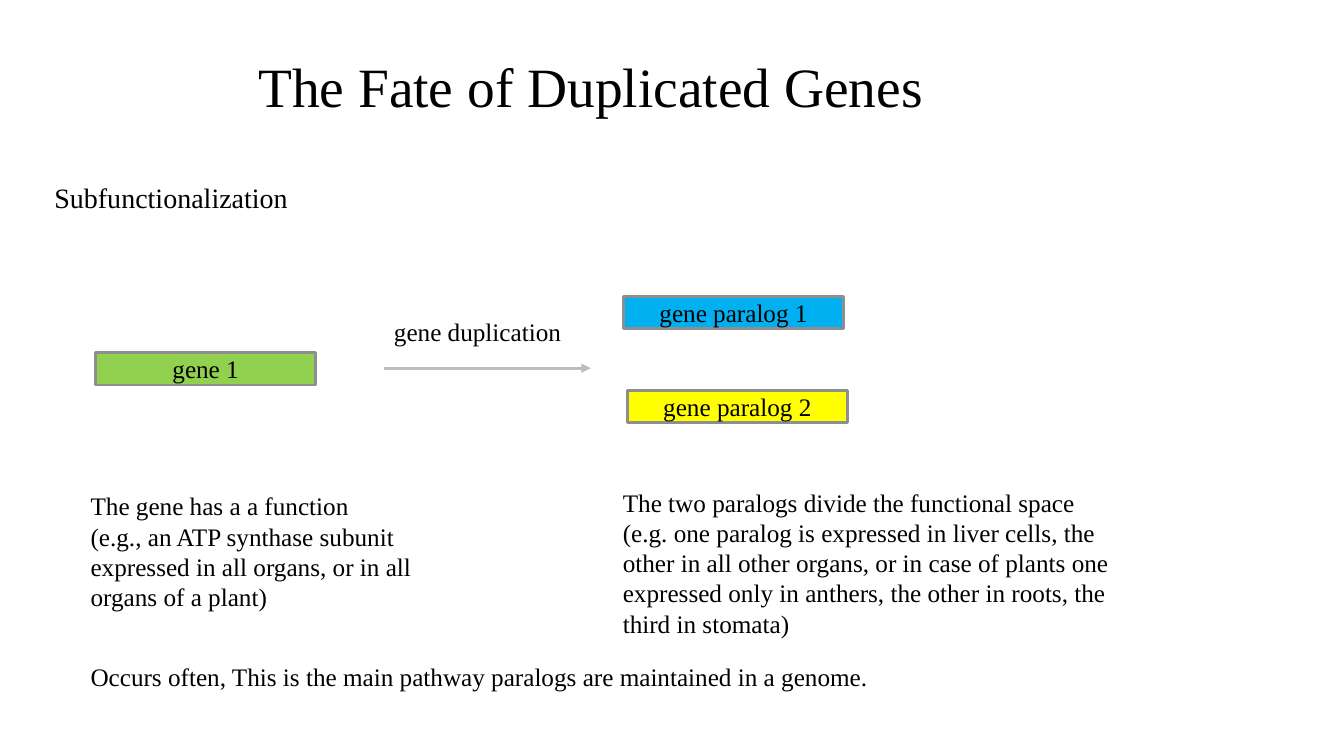
from pptx import Presentation
from pptx.dml.color import RGBColor
from pptx.enum.shapes import MSO_CONNECTOR, MSO_SHAPE
from pptx.enum.text import MSO_ANCHOR, MSO_AUTO_SIZE, PP_ALIGN
from pptx.oxml.ns import qn
from pptx.util import Pt
from lxml.etree import SubElement

FONT = "Times New Roman"
BLACK = RGBColor(0x00, 0x00, 0x00)
GREEN = RGBColor(0x92, 0xD0, 0x50)
BLUE = RGBColor(0x00, 0xB0, 0xF0)
YELLOW = RGBColor(0xFF, 0xFF, 0x00)
BORDER = RGBColor(0x8E, 0x8E, 0x8E)
ARROW = RGBColor(0xBC, 0xBC, 0xBC)


def add_text(p, text, size):
    r = p.add_run()
    r.text = text
    r.font.name = FONT
    r.font.size = Pt(size)
    r.font.color.rgb = BLACK


prs = Presentation()
prs.slide_width, prs.slide_height = Pt(960), Pt(540)
s = prs.slides.add_slide(prs.slide_layouts[5])

title = s.shapes.title
title.left, title.top, title.width, title.height = Pt(8), Pt(8.6), Pt(828), Pt(104.4)
tf = title.text_frame
tf.vertical_anchor = MSO_ANCHOR.MIDDLE
p = tf.paragraphs[0]
p.alignment = PP_ALIGN.CENTER
add_text(p, "The Fate of Duplicated Genes", 39.6)

genes = [
    ("gene 1", 68.4, 252, GREEN),
    ("gene paralog 1", 445.5, 211.6, BLUE),
    ("gene paralog 2", 448.2, 278.8, YELLOW),
]
for name, left, top, color in genes:
    sp = s.shapes.add_shape(MSO_SHAPE.RECTANGLE, Pt(left), Pt(top), Pt(157), Pt(23))
    sp.shadow.inherit = False
    sp.fill.solid()
    sp.fill.fore_color.rgb = color
    sp.line.color.rgb = BORDER
    sp.line.width = Pt(2)
    tf = sp.text_frame
    tf.vertical_anchor = MSO_ANCHOR.MIDDLE
    p = tf.paragraphs[0]
    p.alignment = PP_ALIGN.CENTER
    add_text(p, name, 18)

arrow = s.shapes.add_connector(MSO_CONNECTOR.STRAIGHT, Pt(274.3), Pt(263), Pt(422), Pt(263))
arrow.line.color.rgb = ARROW
arrow.line.width = Pt(2.25)
SubElement(arrow.line._get_or_add_ln(), qn("a:tailEnd"), type="triangle")
SubElement(arrow._element.spPr, qn("a:effectLst"))

notes = [
    (["gene duplication"], 274.3, 222.5, 137.5, 29, 18, True),
    (["Subfunctionalization"], 31.7, 125.3, 182, 31.5, 20, False),
    (["Occurs often, This is the main pathway paralogs are maintained in a genome."],
     57.6, 468.7, 571, 29, 18, False),
    (["The gene has a a function",
      "(e.g., an ATP synthase subunit expressed in all organs, or in all organs of a plant)"],
     57.6, 347, 253.4, 94.3, 18, True),
    (["The two paralogs divide the functional space",
      "(e.g. one paralog is expressed in liver cells, the other in all other organs, "
      "or in case of plants one expressed only in anthers, the other in roots, "
      "the third in stomata)"],
     437.8, 344.2, 378.7, 138.2, 18, True),
]
for lines, left, top, width, height, size, wrap in notes:
    box = s.shapes.add_textbox(Pt(left), Pt(top), Pt(width), Pt(height))
    tf = box.text_frame
    tf.word_wrap = wrap
    tf.auto_size = MSO_AUTO_SIZE.SHAPE_TO_FIT_TEXT
    p = tf.paragraphs[0]
    for i, line in enumerate(lines):
        if i:
            p.add_line_break()
        add_text(p, line, size)

prs.save("out.pptx")
